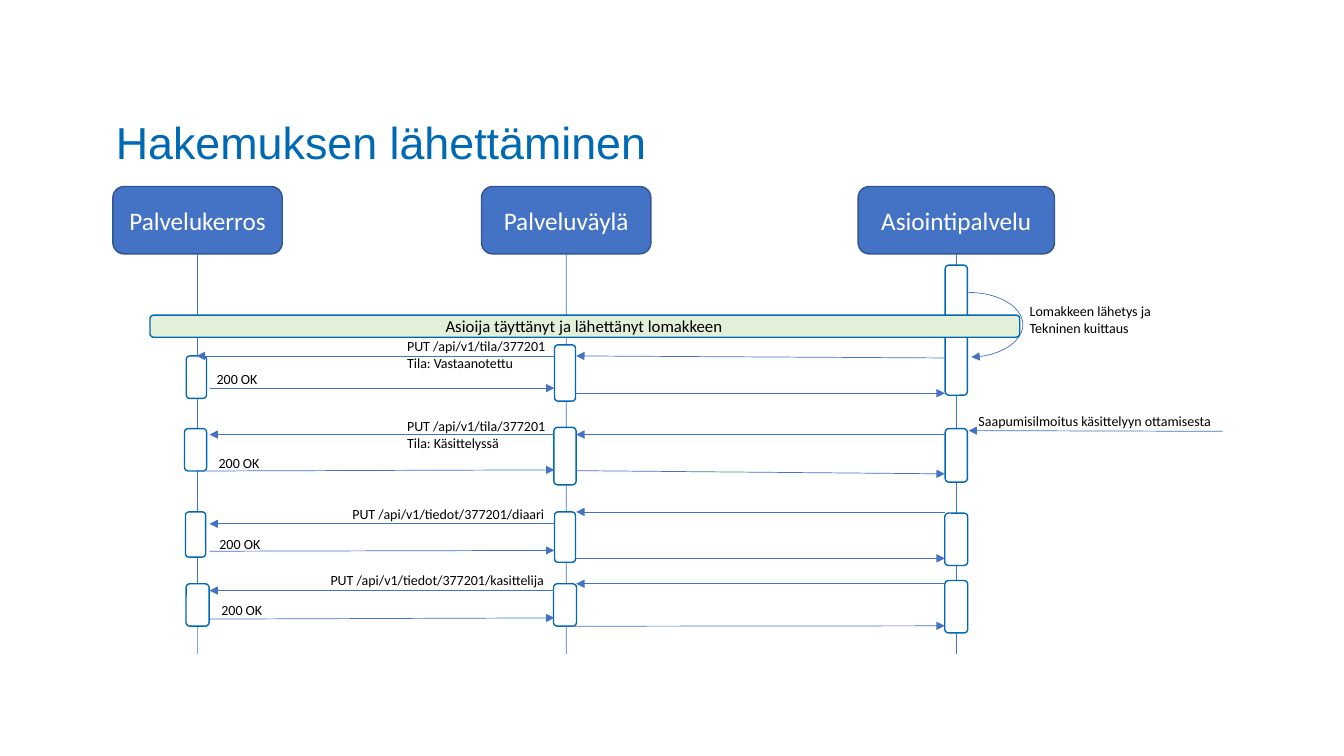
import pptx
import pptx.util
import pptx.dml.color
import pptx.enum.shapes
import pptx.enum.text
import pptx.oxml.ns
from lxml import etree

Cm = pptx.util.Cm
Pt = pptx.util.Pt
SHAPES = pptx.enum.shapes.MSO_SHAPE
ALIGN = pptx.enum.text.PP_ALIGN
ANCHOR = pptx.enum.text.MSO_ANCHOR

BLUE, DARK_BLUE, TITLE_BLUE = "4472C4", "325491", "0069B4"
WHITE, BLACK, GREEN = "FFFFFF", "000000", "E2F0D9"
LANES = (4.98, 14.27, 24.1)
TOP, BOTTOM = 4.7, 16.48


def rgb(value):
    return pptx.dml.color.RGBColor.from_string(value)


def write(frame, text, size=10, color=BLACK, font="Calibri", align=ALIGN.LEFT,
          anchor=ANCHOR.TOP, wrap=False, grow=True, spacing=None):
    """Fill a text frame, one paragraph per line of text."""
    frame.word_wrap = wrap
    frame.vertical_anchor = anchor
    if grow:
        frame.auto_size = pptx.enum.text.MSO_AUTO_SIZE.SHAPE_TO_FIT_TEXT
    for number, line in enumerate(text.split("\n")):
        paragraph = frame.add_paragraph() if number else frame.paragraphs[0]
        paragraph.alignment = align
        paragraph.line_spacing = spacing
        run = paragraph.add_run()
        run.text = line
        run.font.size = Pt(size)
        run.font.name = font
        run.font.color.rgb = rgb(color)


def label(slide, left, top, width, height, text, **formatting):
    box = slide.shapes.add_textbox(Cm(left), Cm(top), Cm(width), Cm(height))
    write(box.text_frame, text, **formatting)


def rounded(slide, left, top, width, height, fill=WHITE, line=TITLE_BLUE):
    shape = slide.shapes.add_shape(SHAPES.ROUNDED_RECTANGLE,
                                   Cm(left), Cm(top), Cm(width), Cm(height))
    shape.shadow.inherit = False
    shape.fill.solid()
    shape.fill.fore_color.rgb = rgb(fill)
    shape.line.color.rgb = rgb(line)
    shape.line.width = Pt(1)
    return shape


def thin_line(line, arrow):
    line.color.rgb = rgb(BLUE)
    line.width = Pt(0.5)
    if arrow:
        tail = etree.SubElement(line._get_or_add_ln(), pptx.oxml.ns.qn("a:tailEnd"))
        tail.set("type", "triangle")


def link(slide, start, end, arrow=True):
    """Draw a line; each end is an (x, y) point or a (shape, site) pair."""
    joined_start, joined_end = (hasattr(point[0], "shape_id") for point in (start, end))
    x1, y1 = (0, 0) if joined_start else start
    x2, y2 = (0, 0) if joined_end else end
    connector = slide.shapes.add_connector(pptx.enum.shapes.MSO_CONNECTOR.STRAIGHT,
                                           Cm(x1), Cm(y1), Cm(x2), Cm(y2))
    if joined_start:
        connector.begin_connect(*start)
    if joined_end:
        connector.end_connect(*end)
    thin_line(connector.line, arrow)
    etree.SubElement(connector._element.spPr, pptx.oxml.ns.qn("a:effectLst"))


def participant(slide, center, top, width, height, bottom, name):
    """Header box with its lifeline."""
    header = rounded(slide, center - width / 2, top, width, height, BLUE, DARK_BLUE)
    write(header.text_frame, name, size=18, color=WHITE, align=ALIGN.CENTER,
          anchor=ANCHOR.MIDDLE, wrap=True, grow=False)
    link(slide, (header, 2), (center, bottom), arrow=False)


def exchange(slide, top, bars, from_portal, to_layer, from_layer, to_portal,
             request, request_box, reply_at,
             request_to_top=False, reply_from_base=False, forward_from_base=False):
    """One request and its reply; heights are measured down from top.

    Bars are (shift from lane, top, width, height); arrows are (start, end) heights.
    """
    layer, bus, _ = [rounded(slide, lane + shift - width / 2, top + down, width, height)
                     for lane, (shift, down, width, height) in zip(LANES, bars)]
    layer_edge, bus_left, bus_right, portal_edge = 5.28, 13.97, 14.52, 23.81
    link(slide, (portal_edge, top + from_portal[0]), (bus_right, top + from_portal[1]))
    link(slide, (bus_left, top + to_layer),
         (layer, 0) if request_to_top else (layer_edge, top + to_layer))
    link(slide, (layer, 2) if reply_from_base else (layer_edge, top + from_layer[0]),
         (bus_left, top + from_layer[1]))
    link(slide, (bus, 2) if forward_from_base else (bus_right, top + to_portal[0]),
         (portal_edge, top + to_portal[1]))
    down, width, height = request_box
    label(slide, 14.07 - width, top + down, width, height, request)
    label(slide, reply_at[0], top + reply_at[1], 1.57, 0.69, "200 OK")


def submission_band(slide, left, top, width, height):
    rounded(slide, left, top, width, height, GREEN)
    label(slide, left + 7.2, top - 0.12, 8.13, 0.76,
          "Asioija täyttänyt ja lähettänyt lomakkeen", size=12, wrap=True)


def self_call(slide, left, top, width, height):
    """Arc from the portal back to itself, with its label."""
    arc = slide.shapes.add_shape(SHAPES.ARC, Cm(left), Cm(top), Cm(width), Cm(height))
    arc.adjustments[0], arc.adjustments[1] = 162, 50.99
    arc.shadow.inherit = False
    arc.fill.background()
    thin_line(arc.line, arrow=True)
    label(slide, left + 2.66, top + 0.13, 3.61, 1.12,
          "Lomakkeen lähetys ja\nTekninen kuittaus")


def arrival_notice(slide, left, top, width, height):
    link(slide, (left + 6.4, top + 0.61), (left, top + 0.59))
    label(slide, left, top, width, height, "Saapumisilmoitus käsittelyyn ottamisesta", wrap=True)


def main():
    deck = pptx.Presentation()
    deck.slide_width, deck.slide_height = Cm(33.87), Cm(19.05)
    slide = deck.slides.add_slide(deck.slide_layouts[6])
    label(slide, 2.67, 2.36, 25.4, 2.57, "Hakemuksen lähettäminen", size=32,
          color=TITLE_BLUE, font="Arial", anchor=ANCHOR.MIDDLE, wrap=True,
          grow=False, spacing=0.9)
    for lane, width, name in zip(LANES, (4.27, 4.27, 4.95),
                                 ("Palvelukerros", "Palveluväylä", "Asiointipalvelu")):
        participant(slide, lane, TOP, width, 1.7, BOTTOM, name)

    exchange(slide, 8.69,
             ((-0.03, 0.28, 0.51, 1.07), (-0.03, 0, 0.53, 1.42), (0, -2.01, 0.56, 3.28)),
             (0.33, 0.28), 0.28, (1.09, 1.09), (1.22, 1.22),
             "PUT /api/v1/tila/377201\nTila: Vastaanotettu", (-0.3, 4.06, 1.12),
             (5.21, 0.53), request_to_top=True)
    exchange(slide, 10.77,
             ((-0.05, 0.03, 0.56, 1.07), (-0.03, 0, 0.56, 1.45), (0, 0.03, 0.56, 1.35)),
             (0.18, 0.18), 0.18, (1.09, 1.07), (1.09, 1.17),
             "PUT /api/v1/tila/377201\nTila: Käsittelyssä", (-0.38, 4.06, 1.12),
             (5.26, 0.56), reply_from_base=True)
    exchange(slide, 12.9,
             ((-0.05, 0, 0.51, 1.14), (-0.03, 0, 0.53, 1.27), (0, 0.03, 0.58, 1.32)),
             (0, 0), 0.3, (0.99, 0.97), (1.17, 1.17),
             "PUT /api/v1/tiedot/377201/diaari", (-0.28, 5.44, 0.69), (5.28, 0.48))
    exchange(slide, 14.63,
             ((0, 0.08, 0.58, 1.07), (-0.03, 0.08, 0.58, 1.07), (0, 0, 0.58, 1.32)),
             (0.08, 0.08), 0.25, (0.97, 0.94), (1.14, 1.14),
             "PUT /api/v1/tiedot/377201/kasittelija", (-0.36, 5.99, 0.69),
             (5.33, 0.41), forward_from_base=True)

    submission_band(slide, 3.78, 7.94, 21.92, 0.56)
    self_call(slide, 23.04, 7.37, 2.74, 1.63)
    arrival_notice(slide, 24.41, 10.26, 6.48, 0.69)
    deck.save("out.pptx")


if __name__ == "__main__":
    main()
